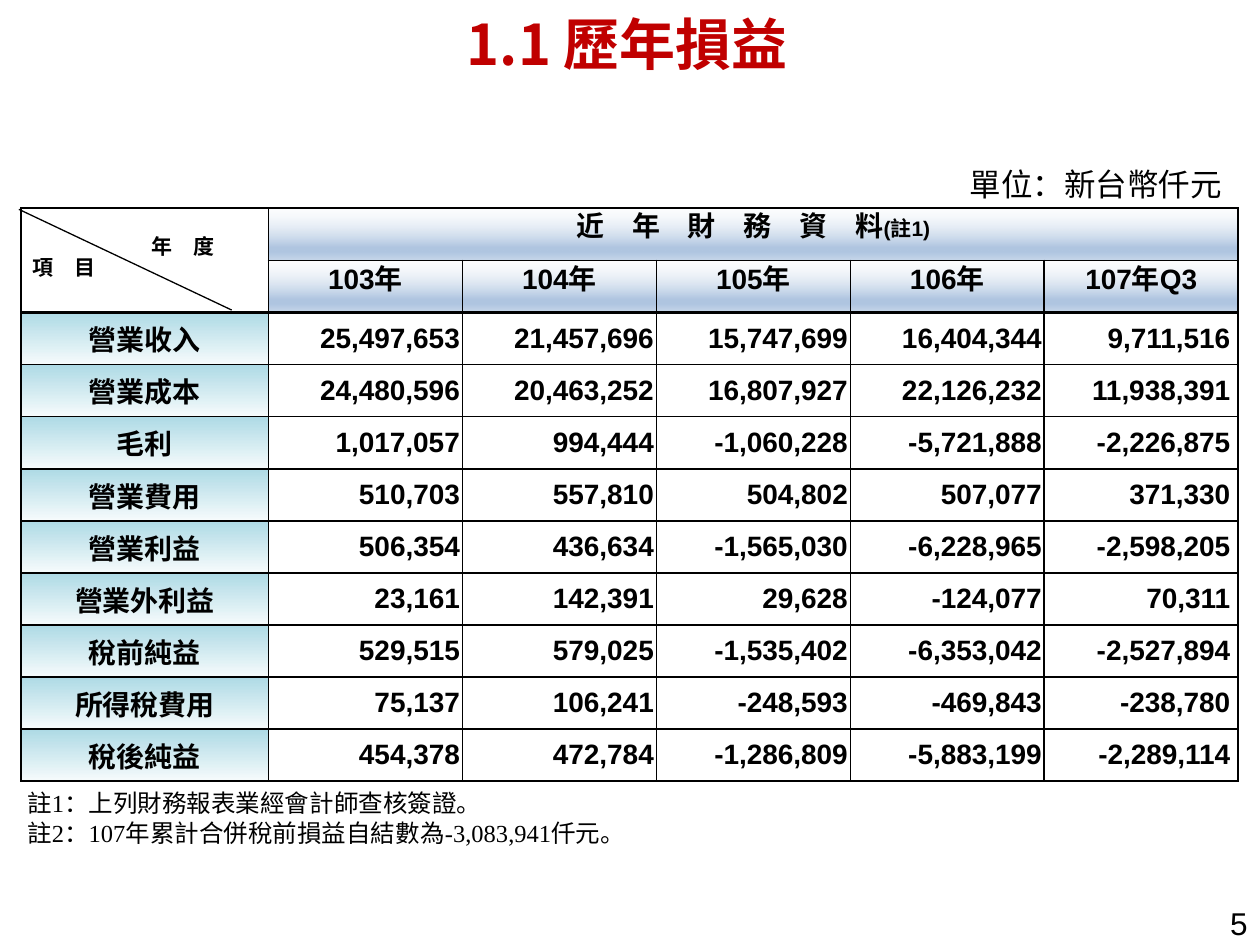
from lxml import etree
from pptx import Presentation
from pptx.dml.color import RGBColor
from pptx.enum.shapes import MSO_CONNECTOR
from pptx.enum.text import MSO_ANCHOR, MSO_AUTO_SIZE, PP_ALIGN
from pptx.oxml import parse_xml
from pptx.oxml.ns import nsdecls, qn
from pptx.util import Cm, Pt

COLORS = {"title": "C00000", "text": "000000", "line": "000000"}
# Gradient stops: position %, colour, opacity %
HEADER_FILL = ([(0, "F6F9FC", 20), (74, "B0C6E1", 100),
                (83, "B0C6E1", 100), (100, "CAD9EB", 100)], 90)
LABEL_FILL = ([(0, "F6FBFC", 100), (100, "AEDAE5", 100)], 270)
CJK = "Noto Sans CJK SC"

YEARS = ["103年", "104年", "105年", "106年", "107年Q3"]
ITEMS = [
    ("營業收入", "25,497,653", "21,457,696", "15,747,699", "16,404,344", "9,711,516"),
    ("營業成本", "24,480,596", "20,463,252", "16,807,927", "22,126,232", "11,938,391"),
    ("毛利", "1,017,057", "994,444", "-1,060,228", "-5,721,888", "-2,226,875"),
    ("營業費用", "510,703", "557,810", "504,802", "507,077", "371,330"),
    ("營業利益", "506,354", "436,634", "-1,565,030", "-6,228,965", "-2,598,205"),
    ("營業外利益", "23,161", "142,391", "29,628", "-124,077", "70,311"),
    ("稅前純益", "529,515", "579,025", "-1,535,402", "-6,353,042", "-2,527,894"),
    ("所得稅費用", "75,137", "106,241", "-248,593", "-469,843", "-238,780"),
    ("稅後純益", "454,378", "472,784", "-1,286,809", "-5,883,199", "-2,289,114"),
]


class Deck:
    def __init__(self):
        self.prs = Presentation()
        self.prs.slide_width, self.prs.slide_height = Cm(25.4), Cm(19.05)
        self.s = self.prs.slides.add_slide(self.prs.slide_layouts[5])

    def run(self, p, text, size, font="Arial", bold=False, color="text"):
        r = p.add_run()
        r.text = text
        r.font.size, r.font.name, r.font.bold = Pt(size), font, bold
        r.font.color.rgb = RGBColor.from_string(COLORS[color])
        etree.SubElement(r._r.get_or_add_rPr(), qn("a:ea")).set("typeface", CJK)

    def indent(self, p, left, first=0):
        pPr = p._p.get_or_add_pPr()
        pPr.set("marL", str(Cm(left)))
        pPr.set("indent", str(Cm(first)))

    def title(self, text, x, y, w, h):
        sp = self.s.shapes.title
        sp.left, sp.top, sp.width, sp.height = Cm(x), Cm(y), Cm(w), Cm(h)
        tf = sp.text_frame
        tf.auto_size = MSO_AUTO_SIZE.NONE
        tf.vertical_anchor = MSO_ANCHOR.MIDDLE
        p = tf.paragraphs[0]
        p.alignment = PP_ALIGN.CENTER
        self.run(p, text, 32, CJK, True, "title")

    def text(self, lines, x, y, w, h, size, font, wrap=True, hang=0,
             align=PP_ALIGN.LEFT, anchor=MSO_ANCHOR.TOP):
        tf = self.s.shapes.add_textbox(Cm(x), Cm(y), Cm(w), Cm(h)).text_frame
        tf.word_wrap, tf.vertical_anchor = wrap, anchor
        for i, line in enumerate(lines):
            p = tf.add_paragraph() if i else tf.paragraphs[0]
            p.alignment = align
            if hang:
                self.indent(p, hang, -hang)
            self.run(p, line, size, font)

    def line(self, x1, y1, x2, y2, width):
        c = self.s.shapes.add_connector(
            MSO_CONNECTOR.STRAIGHT, Cm(x1), Cm(y1), Cm(x2), Cm(y2))
        c.line.color.rgb = RGBColor.from_string(COLORS["line"])
        c.line.width = Pt(width)
        etree.SubElement(c._element.spPr, qn("a:effectLst"))

    def table(self, x, y, widths, heights):
        frame = self.s.shapes.add_table(
            len(heights), len(widths), Cm(x), Cm(y), Cm(sum(widths)), Cm(sum(heights)))
        t = frame.table
        t.first_row = t.horz_banding = False
        # Plain style: no grid, no fill
        style = t._tbl.tblPr.find(qn("a:tableStyleId"))
        style.text = "{2D5ABB26-0587-4C30-8999-92F81FD0307C}"
        for col, w in zip(t.columns, widths):
            col.width = Cm(w)
        for row, h in zip(t.rows, heights):
            row.height = Cm(h)
        for cell in t.iter_cells():
            cell.margin_left = cell.margin_right = Cm(0.05)
            cell.margin_top = cell.margin_bottom = 0
            cell.vertical_anchor = MSO_ANCHOR.MIDDLE
            cell.fill.background()
        return t

    def cell(self, cell, runs, align, spacing=None, grad=None):
        p = cell.text_frame.paragraphs[0]
        p.alignment = align
        if spacing:
            p.line_spacing = Pt(spacing)
        for text, size in runs:
            self.run(p, text, size, bold=True)
        if grad:
            self.gradient(cell, *grad)

    def gradient(self, cell, stops, angle):
        gs = "".join(
            f'<a:gs pos="{pos * 1000}"><a:srgbClr val="{color}">'
            f'<a:alpha val="{alpha * 1000}"/></a:srgbClr></a:gs>'
            for pos, color, alpha in stops)
        tcPr = cell._tc.get_or_add_tcPr()
        tcPr.remove(tcPr.find(qn("a:noFill")))
        tcPr.append(parse_xml(
            f'<a:gradFill {nsdecls("a")} rotWithShape="1"><a:gsLst>{gs}</a:gsLst>'
            f'<a:lin ang="{angle * 60000}" scaled="0"/></a:gradFill>'))

    def borders(self, cell, **widths):
        tcPr = cell._tc.get_or_add_tcPr()
        for i, (side, w) in enumerate(widths.items()):
            tcPr.insert(i, parse_xml(
                f'<a:ln{side} {nsdecls("a")} w="{Pt(w)}"><a:solidFill>'
                f'<a:srgbClr val="{COLORS["line"]}"/></a:solidFill></a:ln{side}>'))


def main():
    d = Deck()
    center, right = PP_ALIGN.CENTER, PP_ALIGN.RIGHT

    # Title, unit and page number
    d.title("1.1 歷年損益", 1.22, 0, 22.86, 1.73)
    d.text(["單位：新台幣仟元"], 19.3, 3.2, 5.64, 1.02, 18, CJK, wrap=False)
    d.text(["5"], 21.26, 18.16, 4.14, 0.89, 18, "Arial",
           align=right, anchor=MSO_ANCHOR.MIDDLE)

    # Table: narrow spacer column, two header rows, items, spacer row
    last_row, last_col = len(ITEMS) + 1, len(YEARS) + 1
    t = d.table(0.23, 4.2, [0.2, 4.98] + [3.91] * len(YEARS),
                [1.05] * (last_row + 1) + [2.1])
    t.cell(0, 1).merge(t.cell(1, 1))
    t.cell(0, 2).merge(t.cell(0, last_col))
    t.cell(last_row + 1, 0).merge(t.cell(last_row + 1, last_col))

    # Header cells
    corner = t.cell(0, 1)
    d.cell(corner, [("年　度", 12)], PP_ALIGN.LEFT, 12)
    d.indent(corner.text_frame.paragraphs[0], 2.57)
    p = corner.text_frame.add_paragraph()
    p.line_spacing = Pt(12)
    d.indent(p, 0.18)
    d.run(p, "項　目", 12, bold=True)
    d.cell(t.cell(0, 2), [("近　年　財　務　資　料", 16), ("(註1)", 12)],
           center, 12, HEADER_FILL)
    for c, year in enumerate(YEARS, 2):
        d.cell(t.cell(1, c), [(year, 16)], center, 12, HEADER_FILL)

    # Item rows
    for r, (label, *values) in enumerate(ITEMS, 2):
        d.cell(t.cell(r, 1), [(label, 16)], center, grad=LABEL_FILL)
        for c, value in enumerate(values, 2):
            d.cell(t.cell(r, c), [(value, 16)], right)
        t.cell(r, last_col).margin_right = Cm(0.16)

    # Borders: heavier outside and below the header
    for r in range(last_row + 1):
        for c in range(1, last_col + 1):
            cell = t.cell(r, c)
            if cell.is_spanned:
                continue
            end_row, end_col = r + cell.span_height - 1, c + cell.span_width - 1
            d.borders(cell,
                      L=1.5 if c == 1 else 1,
                      R=1.5 if end_col == last_col else 1,
                      T=1.5 if r in (0, 2) else 1,
                      B=1.5 if end_row in (1, last_row) else 1)

    # Corner diagonal and notes
    d.line(0.38, 4.22, 4.67, 6.25, 0.75)
    d.text(["註1：上列財務報表業經會計師查核簽證。",
            "註2：107年累計合併稅前損益自結數為-3,083,941仟元。"],
           0.3, 15.77, 12.7, 1.45, 14, "Times New Roman", hang=0.86)

    d.prs.save("out.pptx")


if __name__ == "__main__":
    main()
